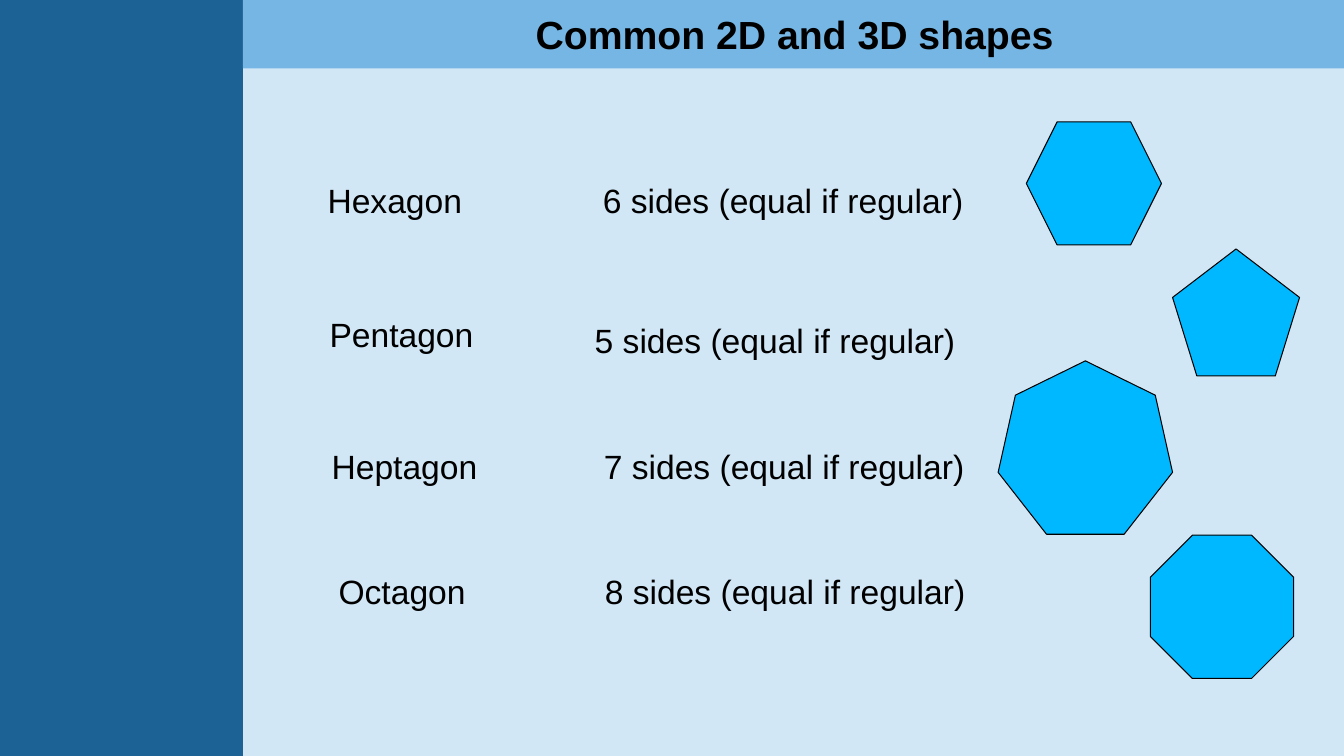
"""Builds a slide that lists common polygons with their numbers of sides."""
from pptx import Presentation
from pptx.dml.color import RGBColor
from pptx.enum.shapes import MSO_SHAPE
from pptx.enum.text import MSO_ANCHOR, MSO_AUTO_SIZE, PP_ALIGN
from pptx.util import Inches, Pt

RECTANGLE = MSO_SHAPE.RECTANGLE
HEXAGON = MSO_SHAPE.HEXAGON
PENTAGON = MSO_SHAPE.REGULAR_PENTAGON
HEPTAGON = MSO_SHAPE.HEPTAGON
OCTAGON = MSO_SHAPE.OCTAGON
TOP = MSO_ANCHOR.TOP
FIT_SHAPE = MSO_AUTO_SIZE.SHAPE_TO_FIT_TEXT
LEFT, CENTER = PP_ALIGN.LEFT, PP_ALIGN.CENTER

PALE_BLUE = RGBColor(0xD1, 0xE7, 0xF6)
DARK_BLUE = RGBColor(0x1D, 0x62, 0x94)
MID_BLUE = RGBColor(0x75, 0xB6, 0xE5)
BRIGHT_BLUE = RGBColor(0x00, 0xB8, 0xFF)
BLACK = RGBColor(0x00, 0x00, 0x00)


def write_text(shape, text, size=24, bold=False, align=LEFT, wrap=False):
    frame = shape.text_frame
    frame.word_wrap = wrap
    frame.auto_size = FIT_SHAPE
    frame.vertical_anchor = TOP
    paragraph = frame.paragraphs[0]
    paragraph.alignment = align
    run = paragraph.add_run()
    run.text = text
    run.font.name = "Arial"
    run.font.size = Pt(size)
    run.font.bold = bold
    run.font.color.rgb = BLACK


def add_filled_shape(kind, box, fill, outline=None):
    shape = slide.shapes.add_shape(kind, *[Inches(length) for length in box])
    shape.shadow.inherit = False
    shape.fill.solid()
    shape.fill.fore_color.rgb = fill
    if outline is None:
        shape.line.fill.background()
    else:
        shape.line.color.rgb = outline
        shape.line.width = Pt(0.75)


presentation = Presentation()
presentation.slide_width = Inches(13.33)
presentation.slide_height = Inches(7.5)
slide = presentation.slides.add_slide(presentation.slide_layouts[5])
slide.background.fill.solid()
slide.background.fill.fore_color.rgb = PALE_BLUE

add_filled_shape(RECTANGLE, (0, 0, 2.41, 7.5), DARK_BLUE)
add_filled_shape(RECTANGLE, (2.41, 0, 10.92, 0.68), MID_BLUE)

title = slide.shapes.title
title.left, title.top = Inches(2.42), Inches(0.05)
title.width, title.height = Inches(10.92), Inches(0.57)
write_text(title, "Common 2D and 3D shapes", size=28, bold=True, align=CENTER, wrap=True)
title.element.getparent().append(title.element)

polygons = [
    ("Hexagon", (3.15, 1.74, 1.55), 6, (5.88, 1.74), HEXAGON, (10.18, 1.21, 1.34, 1.22)),
    ("Pentagon", (3.17, 3.07, 1.64), 5, (5.8, 3.12), PENTAGON, (11.63, 2.47, 1.26, 1.26)),
    ("Heptagon", (3.19, 4.37, 1.66), 7, (5.89, 4.37), HEPTAGON, (9.9, 3.58, 1.73, 1.72)),
    ("Octagon", (3.26, 5.61, 1.47), 8, (5.9, 5.61), OCTAGON, (11.41, 5.31, 1.42, 1.42)),
]
for name, name_box, sides, sides_position, kind, polygon_box in polygons:
    labels = [
        (name, name_box),
        (f"{sides} sides (equal if regular)", (*sides_position, 3.82)),
    ]
    for text, (left, top, width) in labels:
        label = slide.shapes.add_textbox(Inches(left), Inches(top), Inches(width), Inches(0.5))
        write_text(label, text)
    add_filled_shape(kind, polygon_box, BRIGHT_BLUE, outline=BLACK)

presentation.save("out.pptx")
